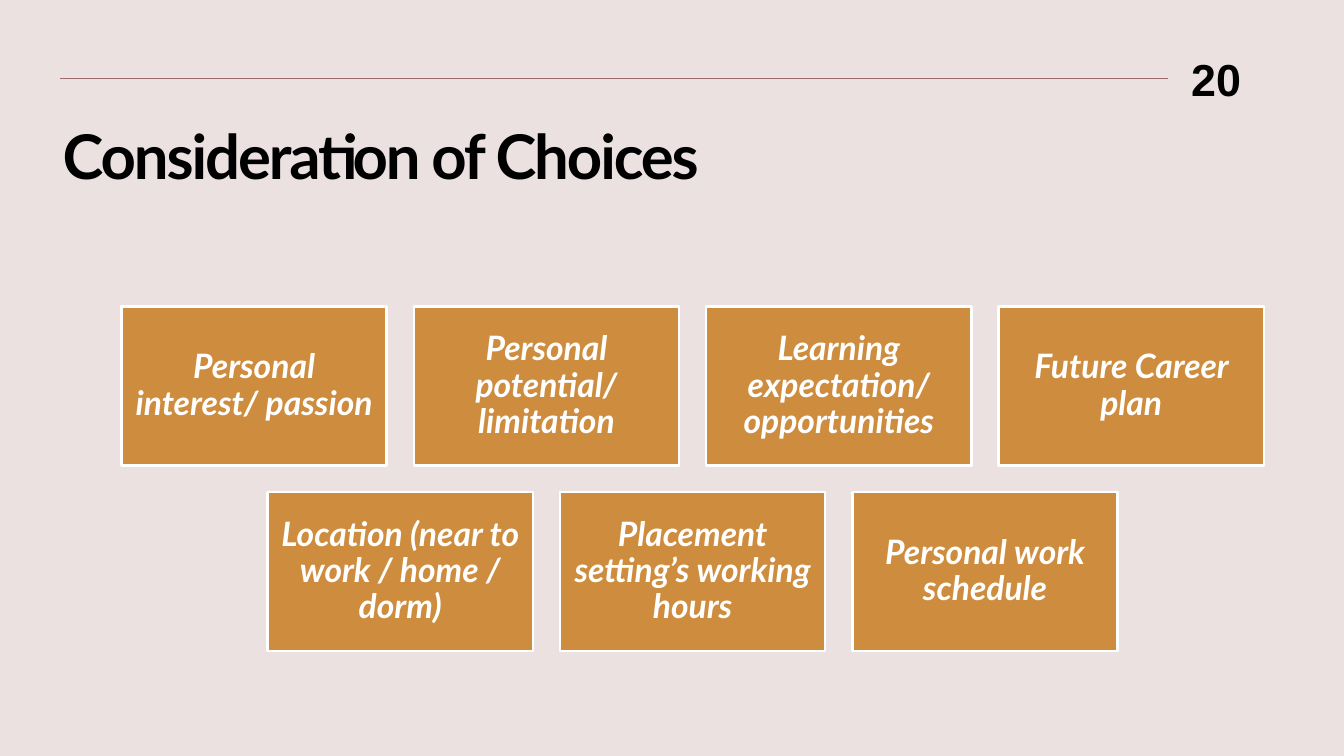
import pptx
import pptx.dml.color
import pptx.enum.shapes
import pptx.enum.text
import pptx.oxml
import pptx.oxml.ns
import pptx.util
from pptx.util import Inches

COLORS = {
    "background": "EBE1E1",
    "rule": "9C6A6A",
    "ink": "000000",
    "box": "CE8D3E",
    "white": "FFFFFF",
}
ALIGN = pptx.enum.text.PP_ALIGN
ANCHOR = pptx.enum.text.MSO_ANCHOR

CHOICE_ROWS = [
    [
        "Personal interest/ passion",
        "Personal potential/ limitation",
        "Learning expectation/ opportunities",
        "Future Career plan",
    ],
    [
        "Location (near to work / home / dorm)",
        "Placement setting’s working hours",
        "Personal work schedule",
    ],
]
ROWS_CENTER, ROWS_TOP = 6.87, 3.04
BOX_WIDTH, BOX_HEIGHT = 2.63, 1.58
COLUMN_GAP, ROW_GAP = 0.27, 0.26


def color(name):
    return pptx.dml.color.RGBColor.from_string(COLORS[name])


class SlideBuilder:
    """Holds the text style and the slide being filled."""

    font = "Lato"
    line_spacing = 0.9

    def __init__(self, presentation):
        self.slide = presentation.slides.add_slide(presentation.slide_layouts[5])
        fill = self.slide.background.fill
        fill.solid()
        fill.fore_color.rgb = color("background")

    def set_text(self, shape, text, size, ink, align, anchor, insets,
                 font=None, italic=False):
        """Fill a shape with one bold paragraph; insets run left, top, right, bottom."""
        frame = shape.text_frame
        frame.word_wrap = True
        frame.auto_size = pptx.enum.text.MSO_AUTO_SIZE.NONE
        frame.vertical_anchor = anchor
        (frame.margin_left, frame.margin_top,
         frame.margin_right, frame.margin_bottom) = map(Inches, insets)
        paragraph = frame.paragraphs[0]
        paragraph.alignment = align
        paragraph.line_spacing = self.line_spacing
        paragraph.space_before = pptx.util.Pt(0)
        run = paragraph.add_run()
        run.text = text
        run.font.name = font or self.font
        run.font.size = pptx.util.Pt(size)
        run.font.bold = True
        run.font.italic = italic
        run.font.color.rgb = color(ink)
        return run

    def rule(self, left, right, y):
        line = self.slide.shapes.add_connector(
            pptx.enum.shapes.MSO_CONNECTOR.STRAIGHT,
            Inches(left), Inches(y), Inches(right), Inches(y))
        line.line.color.rgb = color("rule")
        line.line.width = pptx.util.Pt(0.75)
        properties = line._element.spPr
        properties.append(pptx.oxml.parse_xml(
            f"<a:effectLst {pptx.oxml.ns.nsdecls('a')}/>"))

    def title(self, text, left, top, width, height):
        title = self.slide.shapes.title
        title.left, title.top = Inches(left), Inches(top)
        title.width, title.height = Inches(width), Inches(height)
        run = self.set_text(title, text, 44, "ink", ALIGN.LEFT, ANCHOR.TOP,
                            (0, 0.05, 0.1, 0.05))
        run._r.get_or_add_rPr().set("spc", "-150")

    def page_number(self, text, left, top, width, height):
        box = self.slide.shapes.add_textbox(
            Inches(left), Inches(top), Inches(width), Inches(height))
        self.set_text(box, text, 32, "ink", ALIGN.RIGHT, ANCHOR.TOP,
                      (0, 0, 0, 0), font="Arial")

    def choice_box(self, text, left, top):
        box = self.slide.shapes.add_shape(
            pptx.enum.shapes.MSO_SHAPE.RECTANGLE,
            Inches(left), Inches(top), Inches(BOX_WIDTH), Inches(BOX_HEIGHT))
        box.shadow.inherit = False
        box.fill.solid()
        box.fill.fore_color.rgb = color("box")
        box.line.color.rgb = color("white")
        box.line.width = pptx.util.Pt(1.75)
        self.set_text(box, text, 24, "white", ALIGN.CENTER, ANCHOR.MIDDLE,
                      (0.1, 0.1, 0.1, 0.1), italic=True)

    def choice_row(self, choices, top):
        step = BOX_WIDTH + COLUMN_GAP
        left = ROWS_CENTER - (len(choices) * step - COLUMN_GAP) / 2
        for column, choice in enumerate(choices):
            self.choice_box(choice, left + column * step, top)


def main():
    presentation = pptx.Presentation()
    presentation.slide_width = Inches(13.33)
    presentation.slide_height = Inches(7.5)

    builder = SlideBuilder(presentation)
    builder.rule(0.6, 11.58, 0.78)
    builder.title("Consideration of Choices", 0.62, 1.2, 12.13, 1.32)
    builder.page_number("20", 11.31, 0.57, 1, 0.53)
    for row, choices in enumerate(CHOICE_ROWS):
        builder.choice_row(choices, ROWS_TOP + row * (BOX_HEIGHT + ROW_GAP))

    presentation.save("out.pptx")


if __name__ == "__main__":
    main()
